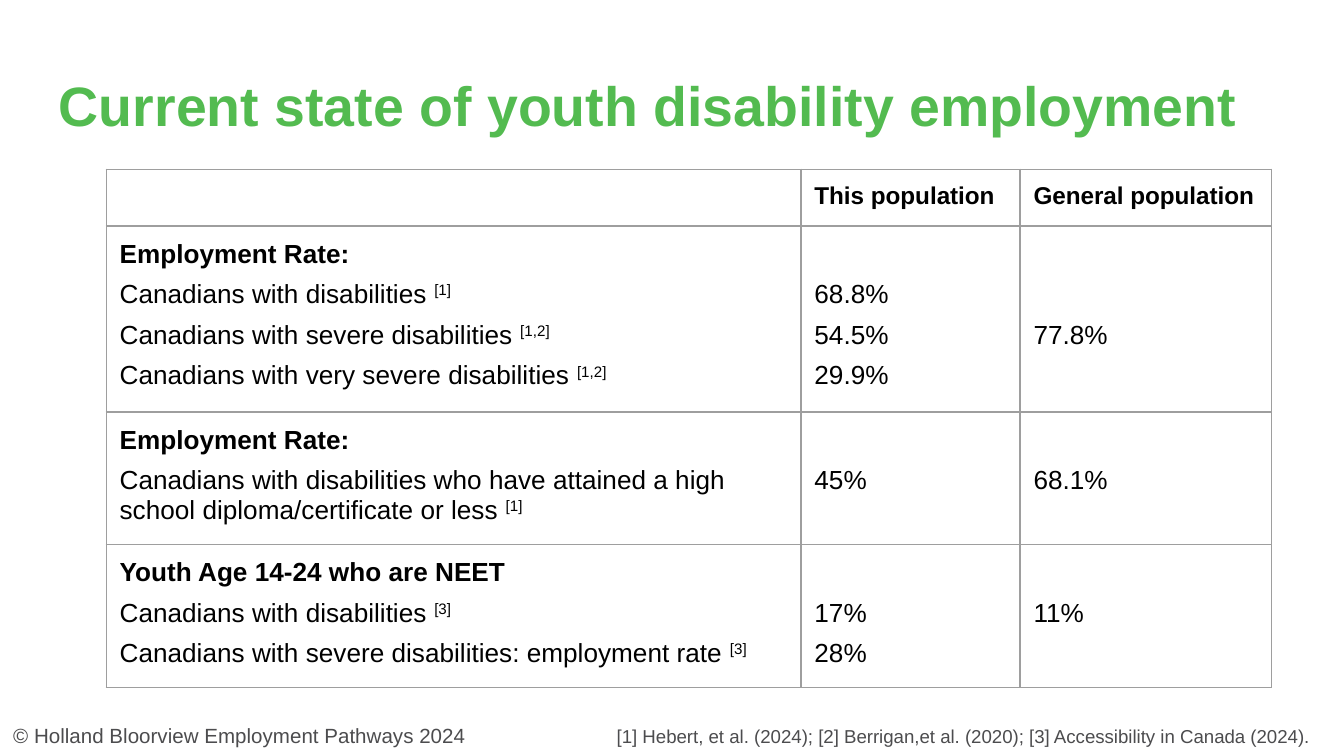
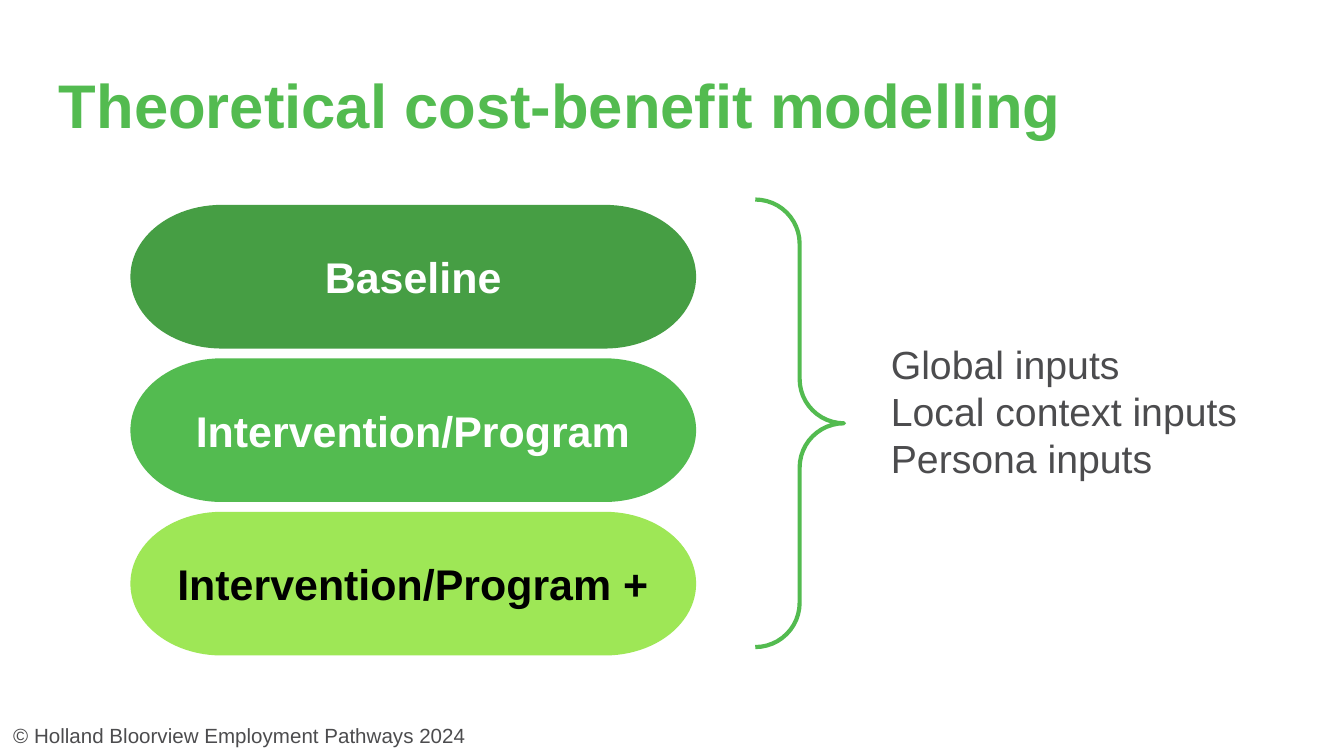
from lxml import etree
from pptx import Presentation
from pptx.dml.color import RGBColor
from pptx.enum.shapes import MSO_SHAPE
from pptx.enum.text import MSO_ANCHOR, PP_ALIGN
from pptx.oxml.ns import qn
from pptx.util import Inches, Pt

TERMINATOR, BRACE = MSO_SHAPE.FLOWCHART_TERMINATOR, MSO_SHAPE.RIGHT_BRACE
TOP, MIDDLE = MSO_ANCHOR.TOP, MSO_ANCHOR.MIDDLE
CENTER = PP_ALIGN.CENTER
WIDTH, HEIGHT = Inches(10), Inches(5.625)
GREEN, DARK_GREEN, LIME = "53BB50", "469E44", "9EE756"
GRAY, BLACK, WHITE, RULE = "4C4C4E", "000000", "FFFFFF", "9E9E9E"
PAD = Inches(0.1)
LINE_STEP = Pt(21.75)
paint = RGBColor.from_string


def area(left, top, width, height):
    return [int(WIDTH * left / 100), int(HEIGHT * top / 100),
            int(WIDTH * width / 100), int(HEIGHT * height / 100)]


def write(frame, lines, size, color, bold=False, anchor=TOP, pad=PAD, gap=0, **layout):
    for name, value in dict(word_wrap=True, vertical_anchor=anchor, margin_left=PAD,
                            margin_right=PAD, margin_top=pad, margin_bottom=pad).items():
        setattr(frame, name, value)
    for index, line in enumerate(lines):
        paragraph = frame.paragraphs[0] if index == 0 else frame.add_paragraph()
        if index and gap:
            paragraph.space_before = Pt(gap)
        for name, value in layout.items():
            setattr(paragraph, name, value)
        words, _, citation = line.partition("^")
        for part in filter(None, (words, citation)):
            run = paragraph.add_run()
            run.text = part
            for name, value in dict(name="Arial", size=Pt(size), bold=bold).items():
                setattr(run.font, name, value)
            run.font.color.rgb = paint(color)
            if part is citation:
                run._r.get_or_add_rPr().set("baseline", "30000")


deck = Presentation()
deck.slide_width, deck.slide_height = WIDTH, HEIGHT
pages = []
for title, title_size in [("Current state of youth disability employment", 29.7),
                          ("Theoretical cost-benefit modelling", 33)]:
    page = deck.slides.add_slide(deck.slide_layouts[6])
    write(page.shapes.add_textbox(*area(3.4, 8.7, 93.2, 11.2)).text_frame, [title],
          title_size, GREEN, True, MIDDLE, PAD // 2, line_spacing=0.9)
    write(page.shapes.add_textbox(*area(0, 94, 44, 6.9)).text_frame,
          ["© Holland Bloorview Employment Pathways 2024"], 11, GRAY)
    pages.append(page)
employment, modelling = pages

column_shares = [51.7, 16.3, 18.7]
row_shares = [7.5, 23.6, 16.7, 18.1]
rates = [
    [(0, []), (0, ["This population"]), (0, ["General population"])],
    [(0, ["Employment Rate:", "Canadians with disabilities ^[1]",
          "Canadians with severe disabilities ^[1,2]",
          "Canadians with very severe disabilities ^[1,2]"]),
     (1, ["68.8%", "54.5%", "29.9%"]), (2, ["77.8%"])],
    [(0, ["Employment Rate:", "Canadians with disabilities who have attained a high "
          "school diploma/certificate or less ^[1]"]),
     (1, ["45%"]), (1, ["68.1%"])],
    [(0, ["Youth Age 14-24 who are NEET", "Canadians with disabilities ^[3]",
          "Canadians with severe disabilities: employment rate ^[3]"]),
     (1, ["17%", "28%"]), (1, ["11%"])],
]
table = employment.shapes.add_table(
    len(row_shares), len(column_shares),
    *area(7.9, 22.4, sum(column_shares), sum(row_shares))).table
table.first_row = table.horz_banding = False
for column, share in zip(table.columns, column_shares):
    column.width = int(WIDTH * share / 100)
for row, share in zip(table.rows, row_shares):
    row.height = int(HEIGHT * share / 100)
for r, entries in enumerate(rates):
    for c, (skipped_lines, lines) in enumerate(entries):
        cell = table.cell(r, c)
        for side in ("a:lnL", "a:lnR", "a:lnT", "a:lnB"):
            border = etree.SubElement(cell._tc.get_or_add_tcPr(), qn(side), w=str(Pt(0.75)))
            ink = etree.SubElement(border, qn("a:solidFill"))
            etree.SubElement(ink, qn("a:srgbClr"), val=RULE)
        cell.fill.background()
        write(cell.text_frame, lines, 14 if r else 13, BLACK, r == 0, gap=6)
        cell.margin_left = cell.margin_right = PAD
        cell.margin_top = PAD + skipped_lines * LINE_STEP if lines else 0
        cell.margin_bottom = PAD if lines else 0
        if r and c == 0:
            cell.text_frame.paragraphs[0].runs[0].font.bold = True

write(employment.shapes.add_textbox(*area(44.9, 93.7, 54.3, 6.6)).text_frame,
      ["[1] Hebert, et al. (2024); [2] Berrigan,et al. (2020); "
       "[3] Accessibility in Canada (2024)."], 10, GRAY, line_spacing=1.15)

scenarios = [("Baseline", DARK_GREEN, WHITE), ("Intervention/Program", GREEN, WHITE),
             ("Intervention/Program +", LIME, BLACK)]
for index, (scenario, fill, ink) in enumerate(scenarios):
    pill = modelling.shapes.add_shape(TERMINATOR, *area(9.7, 27.1 + 20.3 * index, 42.1, 19))
    pill.shadow.inherit = False
    pill.fill.solid()
    pill.fill.fore_color.rgb = paint(fill)
    pill.line.fill.background()
    write(pill.text_frame, [scenario], 23, ink, True, MIDDLE, alignment=CENTER)

brace = modelling.shapes.add_shape(BRACE, *area(56.2, 26.4, 6.6, 59.2))
brace.shadow.inherit = False
brace.adjustments[0] = brace.adjustments[1] = 0.5
brace.fill.background()
brace.line.color.rgb = paint(GREEN)
brace.line.width = Pt(2.25)

write(modelling.shapes.add_textbox(*area(65.3, 43.2, 29.5, 22.4)).text_frame,
      ["Global inputs", "Local context inputs", "Persona inputs"], 21, GRAY)

deck.save("out.pptx")
